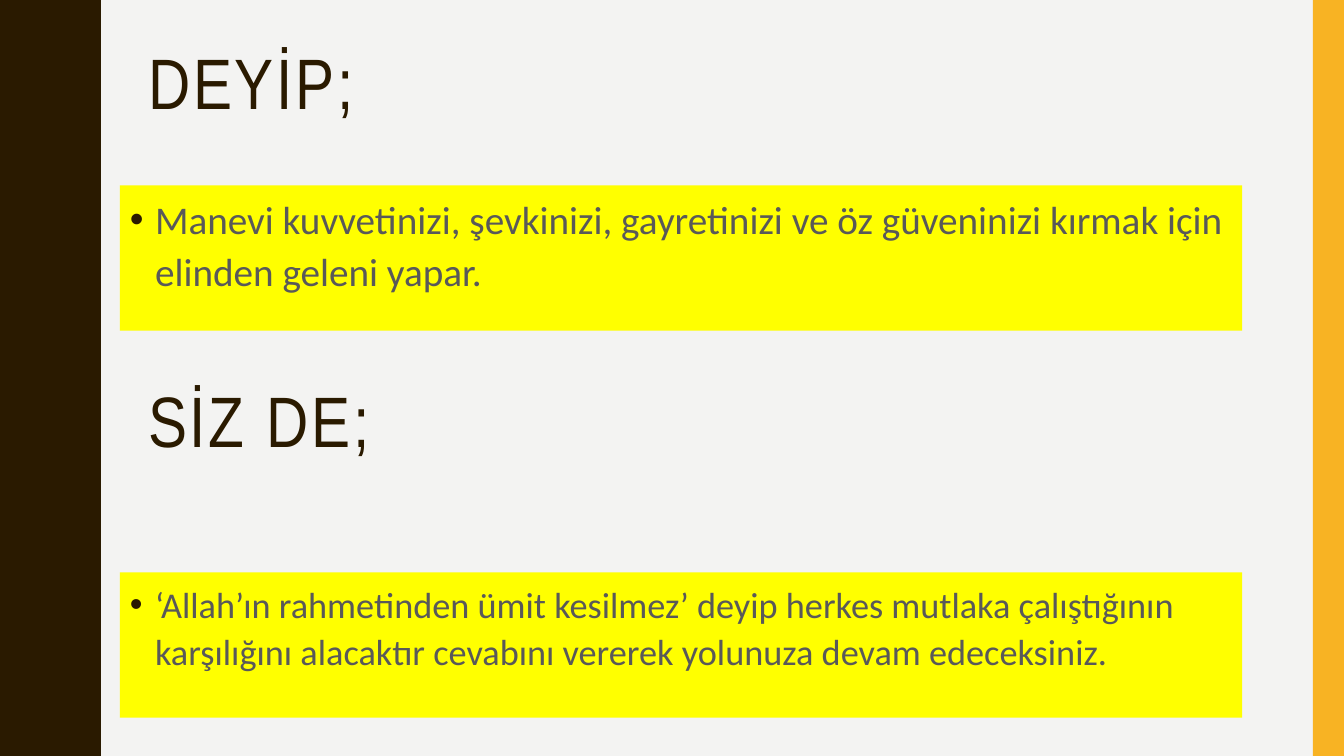
import pptx
import pptx.util
import pptx.dml.color
import pptx.enum.shapes
import pptx.enum.text
import pptx.oxml.ns
import lxml.etree

Inches = pptx.util.Inches
Pt = pptx.util.Pt
RGBColor = pptx.dml.color.RGBColor
MSO_ANCHOR = pptx.enum.text.MSO_ANCHOR
PP_ALIGN = pptx.enum.text.PP_ALIGN

BACKGROUND = RGBColor(0xF3, 0xF3, 0xF2)
BROWN = RGBColor(0x2A, 0x1A, 0x00)
ORANGE = RGBColor(0xF8, 0xB3, 0x23)
YELLOW = RGBColor(0xFF, 0xFF, 0x00)
GREY = RGBColor(0x59, 0x59, 0x59)

SLIDE_WIDTH, SLIDE_HEIGHT = 13.33, 7.5
WAVE_PERIOD = 1.5
# Half a wave, from trough to crest, as (x, y) in inches
HALF_WAVE = [
    (0.78, 0), (0.78, 0.07), (0.79, 0.14), (0.8, 0.2), (0.81, 0.25),
    (0.83, 0.29), (0.85, 0.33), (0.87, 0.38), (0.89, 0.42), (0.91, 0.46),
    (0.93, 0.5), (0.95, 0.55), (0.96, 0.61), (0.97, 0.68), (0.97, 0.75),
]


def paint(shape, color):
    shape.fill.solid()
    shape.fill.fore_color.rgb = color
    shape.line.fill.background()
    shape.shadow.inherit = False


def place(shape, left, top, width, height):
    shape.left, shape.top = Inches(left), Inches(top)
    shape.width, shape.height = Inches(width), Inches(height)


def add_rectangle(slide, left, top, width, height, color):
    rectangle = slide.shapes.add_shape(
        pptx.enum.shapes.MSO_SHAPE.RECTANGLE,
        Inches(left), Inches(top), Inches(width), Inches(height))
    paint(rectangle, color)
    return rectangle


def add_wavy_band(slide, height):
    """Fill the left edge with a band whose right side repeats the wave."""
    falling = [(x, WAVE_PERIOD - y) for x, y in reversed(HALF_WAVE[:-1])]
    wave = HALF_WAVE + falling
    points = [(x, y + period * WAVE_PERIOD)
              for period in range(round(height / WAVE_PERIOD))
              for x, y in wave]
    builder = slide.shapes.build_freeform(0, 0, scale=Inches(1))
    builder.add_line_segments(points + [(0, height)], close=True)
    paint(builder.convert_to_shape(), BROWN)


def write_text(shape, text, size, font_name, color, line_spacing):
    frame = shape.text_frame
    frame.word_wrap = True
    frame.auto_size = pptx.enum.text.MSO_AUTO_SIZE.NONE
    frame.vertical_anchor = MSO_ANCHOR.TOP
    paragraph = frame.paragraphs[0]
    paragraph.alignment = PP_ALIGN.LEFT
    paragraph.line_spacing = line_spacing
    run = paragraph.add_run()
    run.text = text
    run.font.size = Pt(size)
    run.font.name = font_name
    run.font.color.rgb = color
    return paragraph, run


def write_heading(shape, left, top, text):
    place(shape, left, top, 11.13, 1.63)
    run = write_text(shape, text, 51, "Arial Narrow", BROWN, 0.9)[1]
    run.font._element.set("spc", "200")


def add_bullet(paragraph, indent):
    properties = paragraph._p.get_or_add_pPr()
    properties.set("marL", str(Inches(indent)))
    properties.set("indent", str(-Inches(indent)))
    qn = pptx.oxml.ns.qn
    bullet_color = lxml.etree.SubElement(properties, qn("a:buClr"))
    lxml.etree.SubElement(bullet_color, qn("a:srgbClr"), val=str(BROWN))
    lxml.etree.SubElement(properties, qn("a:buFont"), typeface="Arial")
    lxml.etree.SubElement(properties, qn("a:buChar"), char="•")


def add_highlight(slide, left, top, text, size):
    box = add_rectangle(slide, left, top, 11.13, 1.44, YELLOW)
    paragraph = write_text(box, text, size, "Calibri", GREY, 1.1)[0]
    paragraph.space_before = Pt(7)
    add_bullet(paragraph, 0.25)


def build_slide(presentation):
    slide = presentation.slides.add_slide(presentation.slide_layouts[5])
    slide.background.fill.solid()
    slide.background.fill.fore_color.rgb = BACKGROUND
    add_wavy_band(slide, SLIDE_HEIGHT)
    add_rectangle(slide, 13.02, 0, 0.31, SLIDE_HEIGHT, ORANGE)

    write_heading(slide.shapes.title, 1.37, 0.42, "DEYİP;")
    add_highlight(
        slide, 1.19, 1.84,
        "Manevi kuvvetinizi, şevkinizi, gayretinizi ve öz güveninizi "
        "kırmak için elinden geleni yapar.", 28)
    add_highlight(
        slide, 1.19, 5.68,
        "‘Allah’ın rahmetinden ümit kesilmez’ deyip herkes mutlaka "
        "çalıştığının karşılığını alacaktır cevabını vererek yolunuza "
        "devam edeceksiniz.", 25.9)
    second_heading = slide.shapes.add_textbox(0, 0, 0, 0)
    write_heading(second_heading, 1.37, 3.78, "SİZ DE;")


def main():
    presentation = pptx.Presentation()
    presentation.slide_width = Inches(SLIDE_WIDTH)
    presentation.slide_height = Inches(SLIDE_HEIGHT)
    build_slide(presentation)
    presentation.save("out.pptx")


if __name__ == "__main__":
    main()
